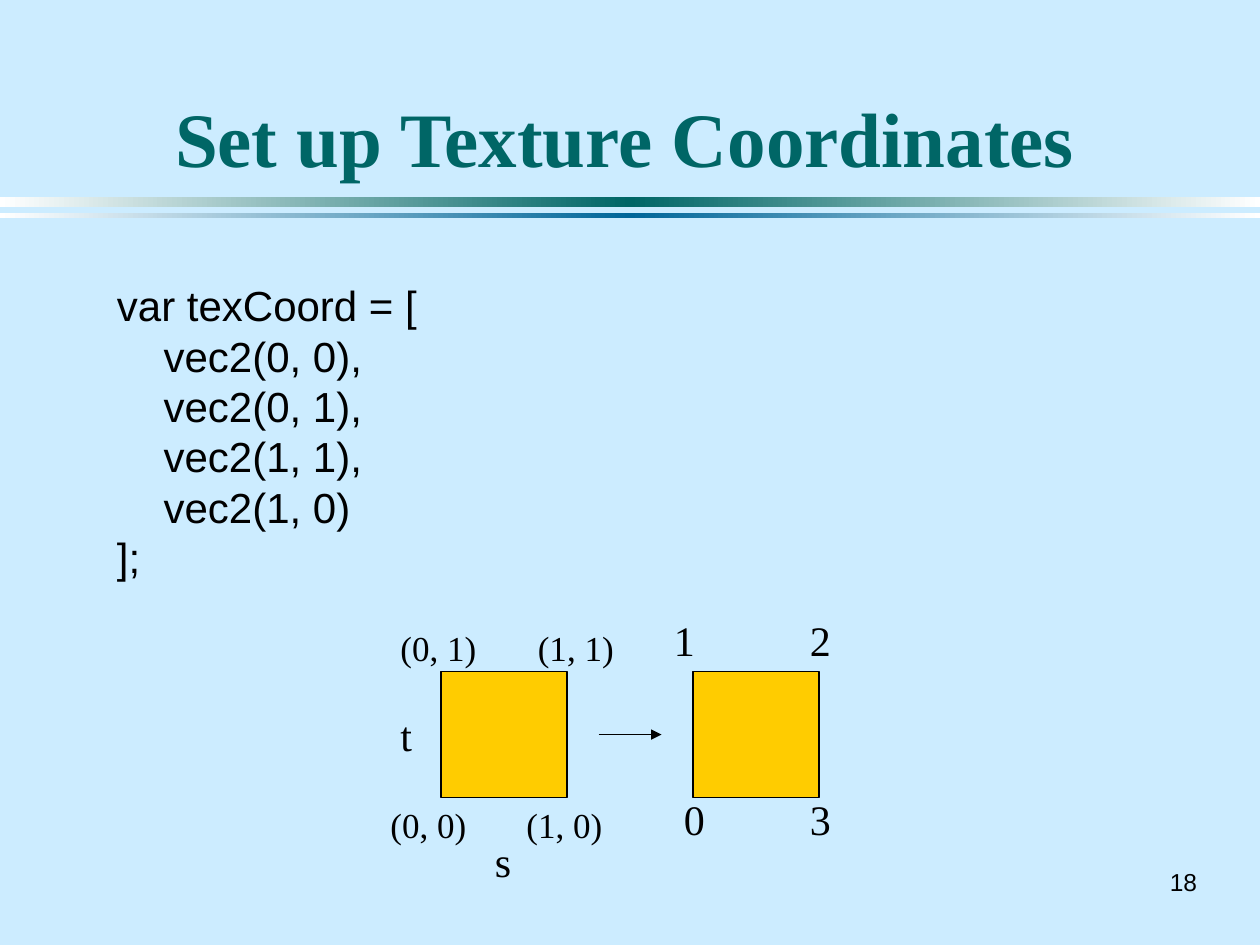
import copy
from dataclasses import dataclass

import pptx
import pptx.dml.color
import pptx.enum.shapes
import pptx.enum.text
import pptx.oxml
import pptx.oxml.ns
import pptx.slide
import pptx.util

Inches = pptx.util.Inches
ALIGN = pptx.enum.text.PP_ALIGN
ANCHOR = pptx.enum.text.MSO_ANCHOR
RECTANGLE = pptx.enum.shapes.MSO_SHAPE.RECTANGLE


@dataclass(frozen=True)
class Theme:
    background: str = "CCECFF"
    ink: str = "000000"
    teal: str = "006666"
    blue: str = "006699"
    band_edge: str = "FFFFFF"
    square: str = "FFCC00"
    serif: str = "Times New Roman"
    sans: str = "Arial"
    title_size: int = 44
    body_size: int = 24
    coordinate_size: int = 20
    number_size: int = 14
    line_width: int = 1


THEME = Theme()


@dataclass(frozen=True)
class Label:
    text: str
    left: float
    top: float
    width: float
    height: float = 0.5
    size: int = THEME.body_size
    font: str = THEME.serif
    color: str = THEME.ink
    bold: bool = False
    align: ALIGN = ALIGN.LEFT
    anchor: ANCHOR = ANCHOR.TOP
    wrap: bool = False


@dataclass(frozen=True)
class Band:
    top: float
    height: float
    color: str


SQUARE_SIDE = 1
SQUARE_TOP = 5.33
SQUARE_LEFTS = (3.5, 5.5)
CODE_INDENT = 0.37

BANDS = (Band(1.56, 0.08, THEME.teal), Band(1.69, 0.04, THEME.blue))
TITLE = Label("Set up Texture Coordinates", 0.67, 0.25, 8.58, 1.25,
              size=THEME.title_size, color=THEME.teal, bold=True,
              align=ALIGN.CENTER, anchor=ANCHOR.BOTTOM, wrap=True)
PAGE_NUMBER = Label("18", 9.17, 6.83, 0.43, 0.33, size=THEME.number_size,
                    font=THEME.sans, align=ALIGN.RIGHT, anchor=ANCHOR.MIDDLE)
CODE = Label("var texCoord = [\nvec2(0, 0),\nvec2(0, 1),\nvec2(1, 1),\nvec2(1, 0)\n];",
             0.83, 2.17, 5, 2.52, font=THEME.sans, wrap=True)
VERTEX_LABELS = tuple(
    Label(text, left, top, 0.37)
    for text, left, top in (("0", 5.33, 6.25), ("1", 5.25, 4.83),
                            ("2", 6.33, 4.83), ("3", 6.33, 6.25)))
COORDINATE_LABELS = tuple(
    Label(text, left, top, 1.08, 0.43, size=THEME.coordinate_size, wrap=True)
    for text, left, top in (("(0, 0)", 3, 6.33), ("(0, 1)", 3.08, 4.92),
                            ("(1, 1)", 4.17, 4.92), ("(1, 0)", 4.08, 6.33)))
AXIS_LABELS = (Label("s", 3.83, 6.58, 0.33), Label("t", 3.08, 5.58, 0.29))


def rgb(color: str) -> pptx.dml.color.RGBColor:
    return pptx.dml.color.RGBColor.from_string(color)


def add_label(slide: pptx.slide.Slide, label: Label) -> pptx.text.text.TextFrame:
    box = slide.shapes.add_textbox(Inches(label.left), Inches(label.top),
                                   Inches(label.width), Inches(label.height))
    frame = box.text_frame
    frame.text = label.text
    frame.word_wrap = label.wrap
    frame.vertical_anchor = label.anchor
    for paragraph in frame.paragraphs:
        paragraph.alignment = label.align
        for run in paragraph.runs:
            run.font.name = label.font
            run.font.size = pptx.util.Pt(label.size)
            run.font.bold = label.bold
            run.font.color.rgb = rgb(label.color)
    return frame


def add_code(slide: pptx.slide.Slide, code: Label) -> None:
    """Add the code and indent the lines between the brackets."""
    for line in add_label(slide, code).paragraphs[1:-1]:
        properties = line._p.get_or_add_pPr()
        properties.set("marL", str(Inches(CODE_INDENT)))
        properties.set("indent", "0")


def add_band(slide: pptx.slide.Slide, band: Band, width: int) -> None:
    """Add a full-width bar that fades out to both sides."""
    bar = slide.shapes.add_shape(RECTANGLE, 0, Inches(band.top),
                                 width, Inches(band.height))
    bar.shadow.inherit = False
    bar.line.fill.background()
    bar.fill.gradient()
    bar.fill.gradient_angle = 0
    stop_list = bar._element.spPr.find(".//" + pptx.oxml.ns.qn("a:gsLst"))
    stop_list.insert(1, copy.deepcopy(stop_list[0]))
    colors = (THEME.band_edge, band.color, THEME.band_edge)
    for stop, position, color in zip(bar.fill.gradient_stops, (0, 0.5, 1), colors):
        stop.position = position
        stop.color.rgb = rgb(color)


def add_square(slide: pptx.slide.Slide, left: float) -> None:
    square = slide.shapes.add_shape(RECTANGLE, Inches(left), Inches(SQUARE_TOP),
                                    Inches(SQUARE_SIDE), Inches(SQUARE_SIDE))
    square.shadow.inherit = False
    square.fill.solid()
    square.fill.fore_color.rgb = rgb(THEME.square)
    square.line.color.rgb = rgb(THEME.ink)
    square.line.width = pptx.util.Pt(THEME.line_width)


def add_arrow(slide: pptx.slide.Slide, start: float, end: float, y: float) -> None:
    arrow = slide.shapes.add_connector(
        pptx.enum.shapes.MSO_CONNECTOR.STRAIGHT,
        Inches(start), Inches(y), Inches(end), Inches(y))
    arrow.line.color.rgb = rgb(THEME.ink)
    arrow.line.width = pptx.util.Pt(THEME.line_width)
    namespace = pptx.oxml.ns.nsdecls("a")
    arrow.line._get_or_add_ln().append(
        pptx.oxml.parse_xml(f'<a:tailEnd {namespace} type="triangle"/>'))
    arrow._element.spPr.append(pptx.oxml.parse_xml(f"<a:effectLst {namespace}/>"))


def main() -> None:
    presentation = pptx.Presentation()
    presentation.slide_width = Inches(10)
    presentation.slide_height = Inches(7.5)
    slide = presentation.slides.add_slide(presentation.slide_layouts[6])
    slide.background.fill.solid()
    slide.background.fill.fore_color.rgb = rgb(THEME.background)

    for band in BANDS:
        add_band(slide, band, presentation.slide_width)
    add_label(slide, PAGE_NUMBER)
    add_label(slide, TITLE)
    for left in SQUARE_LEFTS:
        add_square(slide, left)
    for label in VERTEX_LABELS + COORDINATE_LABELS + AXIS_LABELS:
        add_label(slide, label)
    add_arrow(slide, 4.75, 5.25, SQUARE_TOP + SQUARE_SIDE / 2)
    add_code(slide, CODE)

    presentation.save("out.pptx")


if __name__ == "__main__":
    main()
